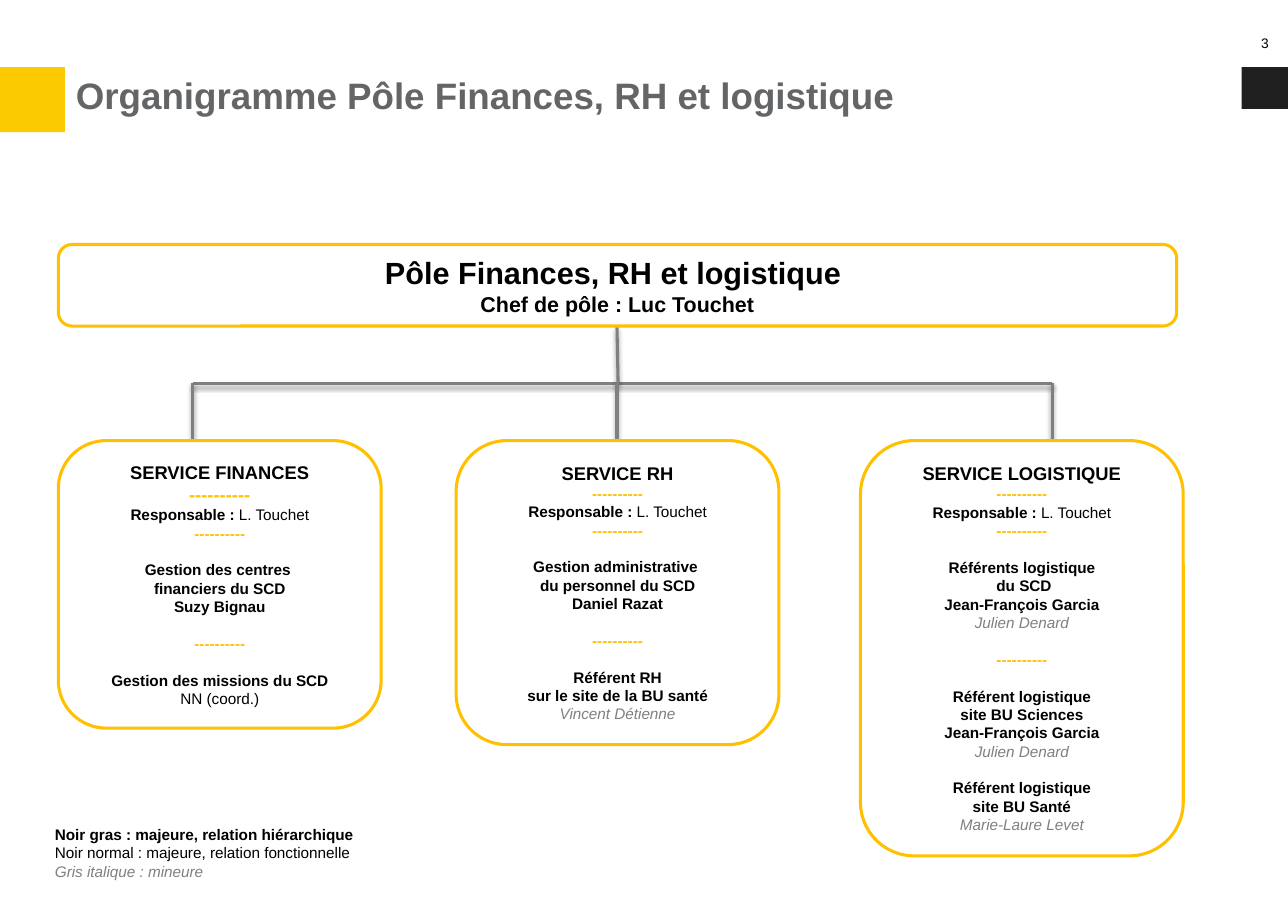
from dataclasses import dataclass

from lxml import etree
from pptx import Presentation
from pptx.dml.color import RGBColor
from pptx.enum.shapes import MSO_CONNECTOR as Conn, MSO_SHAPE as Geo
from pptx.enum.text import MSO_ANCHOR as Anchor, PP_ALIGN as Align
from pptx.oxml.ns import qn
from pptx.util import Inches, Pt

BLACK, GREY, GOLD, WHITE = "000000", "808080", "FFC000", "FFFFFF"
DASHES = "----------"


@dataclass
class Line:
    text: str
    size: float = 10
    color: str = BLACK
    bold: bool = True
    italic: bool = False
    gap: float = 0    # space before, in points
    tail: str = ""    # plain text after the main run


@dataclass
class Card:
    left: float
    height: float
    title: str
    body: list[Line]
    rule: float = 10  # size of the first row of dashes


def plain(text: str) -> Line:
    return Line(text, bold=False)


def minor(text: str) -> Line:
    return Line(text, color=GREY, bold=False, italic=True)


def head(text: str) -> Line:
    return Line(text, gap=12)


def rule(size: float = 10, gap: float = 0) -> Line:
    return Line(DASHES, size, GOLD, gap=gap)


def rgb(code: str) -> RGBColor:
    return RGBColor.from_string(code)


def write(par, text: str, *, size: float, color: str, bold: bool, italic: bool) -> None:
    run = par.add_run()
    run.text = text
    font = run.font
    font.name, font.size = "Arial", Pt(size)
    font.bold, font.italic = bold, italic
    font.color.rgb = rgb(color)


def fill_text(frame, lines: list[Line], align: Align, anchor: Anchor) -> None:
    frame.word_wrap = True
    frame.vertical_anchor = anchor
    for i, line in enumerate(lines):
        par = frame.paragraphs[0] if i == 0 else frame.add_paragraph()
        par.alignment = align
        par.space_before = Pt(line.gap)
        write(par, line.text, size=line.size, color=line.color,
              bold=line.bold, italic=line.italic)
        if line.tail:
            write(par, line.tail, size=line.size, color=line.color,
                  bold=False, italic=False)


def add_box(x: float, y: float, w: float, h: float, fill: str,
            geo: Geo = Geo.RECTANGLE, edge: str = ""):
    box = slide.shapes.add_shape(geo, Inches(x), Inches(y), Inches(w), Inches(h))
    box.shadow.inherit = False
    box.fill.solid()
    box.fill.fore_color.rgb = rgb(fill)
    if edge:
        box.line.color.rgb = rgb(edge)
        box.line.width = Pt(2)
    else:
        box.line.fill.background()
    return box


def add_panel(x: float, y: float, w: float, h: float, lines: list[Line]) -> None:
    box = add_box(x, y, w, h, WHITE, Geo.ROUNDED_RECTANGLE, GOLD)
    fill_text(box.text_frame, lines, Align.CENTER, Anchor.MIDDLE)


def add_text(x: float, y: float, w: float, h: float, lines: list[Line],
             align: Align = Align.LEFT, anchor: Anchor = Anchor.TOP) -> None:
    box = slide.shapes.add_textbox(Inches(x), Inches(y), Inches(w), Inches(h))
    fill_text(box.text_frame, lines, align, anchor)


def add_link(x1: float, y1: float, x2: float, y2: float) -> None:
    link = slide.shapes.add_connector(
        Conn.STRAIGHT, Inches(x1), Inches(y1), Inches(x2), Inches(y2))
    link.line.color.rgb = rgb(GREY)
    link.line.width = Pt(2)
    # Soft shadow below the line
    fx = etree.SubElement(link.element.spPr, qn("a:effectLst"))
    shade = etree.SubElement(fx, qn("a:outerShdw"), blurRad="39400", dist="20300",
                             dir="5400000", rotWithShape="0")
    tint = etree.SubElement(shade, qn("a:srgbClr"), val=BLACK)
    etree.SubElement(tint, qn("a:alpha"), val="38000")


deck = Presentation()
deck.slide_width, deck.slide_height = Inches(11.69), Inches(8.27)
slide = deck.slides.add_slide(deck.slide_layouts[6])

# Header
add_box(11.27, 0.61, 0.42, 0.38, "202020")
add_box(0, 0.61, 0.59, 0.59, "FBCA00")
add_text(11.27, 0.17, 0.42, 0.44, [Line("3", 9, bold=False)],
         Align.CENTER, Anchor.MIDDLE)
add_text(0.59, 0.61, 11.09, 0.92,
         [Line("Organigramme Pôle Finances, RH et logistique", 24, "636567")])

# Links, drawn behind the panels
LEFT, MID, RIGHT, BAR, TOP = 1.75, 5.6, 9.55, 3.48, 4
add_link(LEFT, BAR, RIGHT, BAR)
add_link(MID, 2.97, MID + 0.01, BAR)
for x in (LEFT, MID, RIGHT):
    add_link(x, BAR, x, TOP + 0.05)

# Head of the chart
add_panel(0.53, 2.22, 10.15, 0.74, [
    Line("Pôle Finances, RH et logistique ", 20),
    Line("Chef de pôle : Luc Touchet", 14),
])

# Services
cards = [
    Card(0.53, 2.61, "SERVICE FINANCES", [
        head("Gestion des centres "), Line("financiers du SCD"),
        Line("Suzy Bignau"),
        rule(gap=12),
        head("Gestion des missions du SCD"), plain("NN (coord.)"),
    ], rule=12),
    Card(4.14, 2.76, "SERVICE RH", [
        head("Gestion administrative "), Line("du personnel du SCD"),
        Line("Daniel Razat"),
        rule(gap=12),
        head("Référent RH"), Line("sur le site de la BU santé"),
        minor("Vincent Détienne"),
    ]),
    Card(7.81, 3.77, "SERVICE LOGISTIQUE", [
        head("Référents logistique"), Line(" du SCD"),
        Line("Jean-François Garcia"), minor("Julien Denard"),
        rule(gap=12),
        head("Référent logistique"), Line("site BU Sciences"),
        Line("Jean-François Garcia"), minor("Julien Denard"),
        head("Référent logistique"), Line("site BU Santé"),
        minor("Marie-Laure Levet"),
    ]),
]
for card in cards:
    intro = [Line(card.title, 12), rule(card.rule),
             Line("Responsable : ", tail="L. Touchet"), rule()]
    add_panel(card.left, TOP, 2.93, card.height, intro + card.body)

# Legend
add_text(0.4, 7.44, 3.19, 0.7, [
    Line("Noir gras : majeure, relation hiérarchique"),
    plain("Noir normal : majeure, relation fonctionnelle"),
    minor("Gris italique : mineure"),
])

deck.save("out.pptx")
